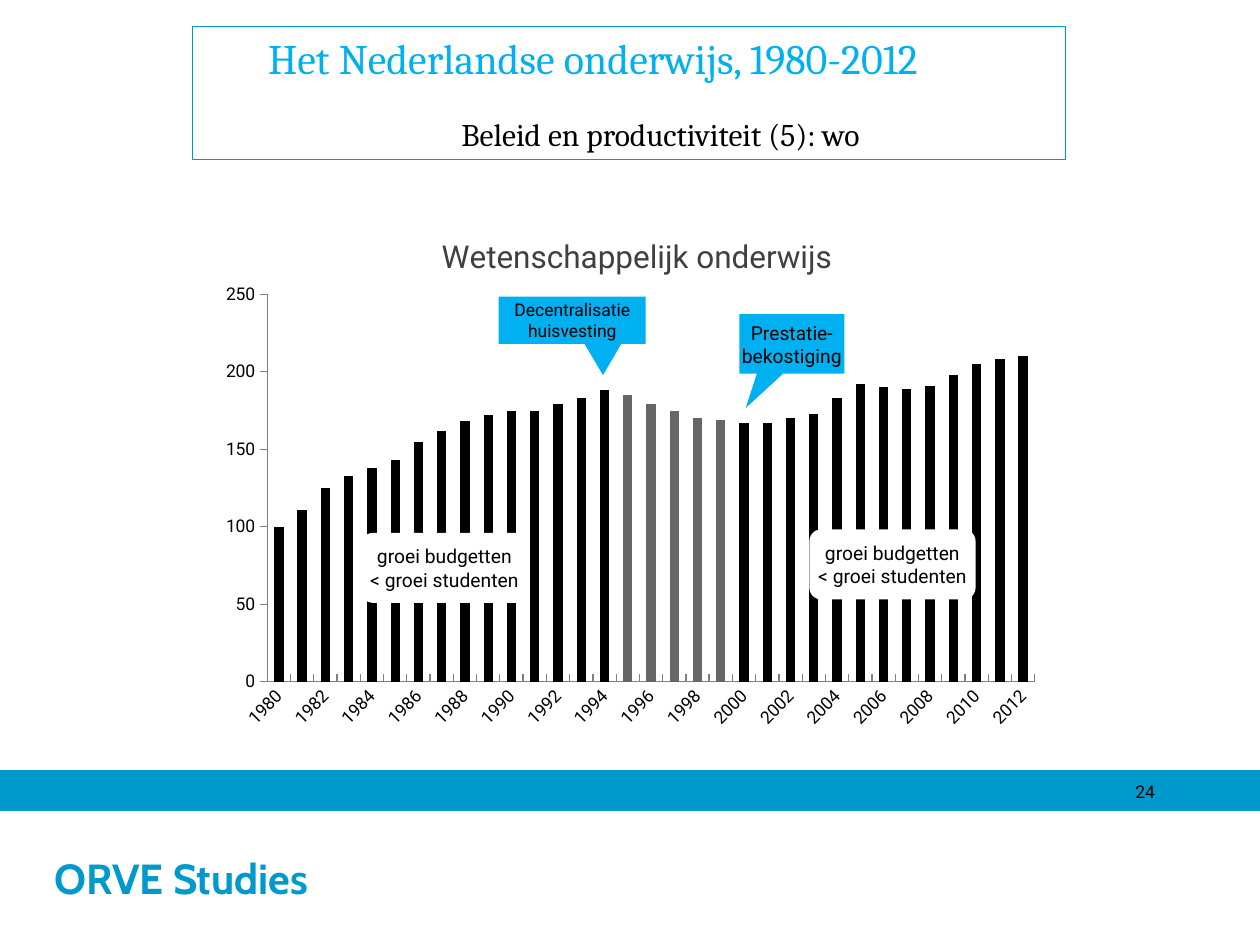
from dataclasses import dataclass

from lxml.etree import SubElement
from pptx import Presentation
from pptx.chart.data import CategoryChartData
from pptx.dml.color import RGBColor
from pptx.enum.chart import XL_CHART_TYPE, XL_TICK_MARK
from pptx.enum.shapes import MSO_SHAPE
from pptx.enum.text import MSO_ANCHOR, MSO_AUTO_SIZE, PP_ALIGN
from pptx.oxml.ns import qn
from pptx.util import Pt


@dataclass(frozen=True)
class Theme:
    """Colours, fonts and type sizes of the slide."""
    band: str = "0099CC"
    accent: str = "00B0F0"
    ink: str = "000000"
    paper: str = "FFFFFF"
    muted: str = "666666"
    axis: str = "808080"
    chart_title: str = "404040"
    heading_font: str = "Cambria"
    body_font: str = "Roboto"
    brand_font: str = "Cabin"
    heading: int = 24
    subheading: int = 18
    label: int = 11
    small: int = 10


THEME = Theme()
PRODUCTIVITY = [100, 111, 125, 133, 138, 143, 155, 162, 168, 172, 175,
                175, 179, 183, 188, 185, 179, 175, 170, 169, 167, 167,
                170, 173, 183, 192, 190, 189, 191, 198, 205, 208, 210]
FIRST_YEAR = 1980
DECLINE_YEARS = range(1995, 2000)
BUDGET_LINES = ["groei budgetten", "< groei studenten"]


def style_font(font, size, color=THEME.ink, name=THEME.body_font, bold=False):
    """Set size, colour, typeface and weight."""
    font.size = Pt(size)
    font.color.rgb = RGBColor.from_string(color)
    font.name = name
    font.bold = bold


def set_frame(frame, side=0, edge=3.6, anchor=MSO_ANCHOR.MIDDLE):
    """Set wrapping, anchor and insets of a text frame."""
    frame.word_wrap = True
    frame.auto_size = MSO_AUTO_SIZE.NONE
    frame.vertical_anchor = anchor
    frame.margin_left = frame.margin_right = Pt(side)
    frame.margin_top = frame.margin_bottom = Pt(edge)


def add_run(paragraph, text, size, **style):
    """Append one formatted run."""
    run = paragraph.add_run()
    run.text = text
    style_font(run.font, size, **style)


def add_block(slide, kind, box, fill, line=None):
    """Add a flat filled shape with an optional outline."""
    block = slide.shapes.add_shape(kind, *map(Pt, box))
    block.shadow.inherit = False
    block.fill.solid()
    block.fill.fore_color.rgb = RGBColor.from_string(fill)
    if line:
        block.line.color.rgb = RGBColor.from_string(line)
        block.line.width = Pt(0.75)
    else:
        block.line.fill.background()
    return block


def add_footer(slide):
    """Add the coloured band, the sender's name and the page number."""
    add_block(slide, MSO_SHAPE.RECTANGLE, (0, 458, 720, 22), THEME.band, THEME.band)
    sender = add_block(slide, MSO_SHAPE.RECTANGLE, (0, 463.5, 720.5, 76.5), THEME.paper)
    set_frame(sender.text_frame, side=31)
    sender_line = sender.text_frame.paragraphs[0]
    sender_line.alignment = PP_ALIGN.LEFT
    add_run(sender_line, "ORVE Studies", THEME.heading,
            color=THEME.band, name=THEME.brand_font, bold=True)
    add_block(slide, MSO_SHAPE.RECTANGLE, (0, 440.6, 720, 17.4), THEME.band, THEME.band)
    page = slide.shapes.add_textbox(Pt(510), Pt(443), Pt(150), Pt(18))
    set_frame(page.text_frame, anchor=MSO_ANCHOR.TOP)
    page_line = page.text_frame.paragraphs[0]
    page_line.alignment = PP_ALIGN.RIGHT
    add_run(page_line, "24", THEME.small)


def add_heading(slide):
    """Place the title and subtitle in the framed title placeholder."""
    heading = slide.shapes.title
    heading.left, heading.top, heading.width, heading.height = map(Pt, (110, 15, 499, 76))
    heading.line.color.rgb = RGBColor.from_string(THEME.band)
    heading.line.width = Pt(0.75)
    frame = heading.text_frame
    set_frame(frame, side=7.2)
    lines = [
        ("Het Nederlandse onderwijs, 1980-2012", THEME.heading, THEME.accent, PP_ALIGN.LEFT),
        ("Beleid en productiviteit (5): wo", THEME.subheading, THEME.ink, PP_ALIGN.CENTER),
    ]
    for index, (text, size, color, alignment) in enumerate(lines):
        paragraph = frame.add_paragraph() if index else frame.paragraphs[0]
        properties = paragraph._p.get_or_add_pPr()
        properties.set("marL", str(Pt(36)))
        properties.set("indent", "0")
        paragraph.alignment = alignment
        paragraph.space_after = Pt(18)
        add_run(paragraph, text, size, color=color, name=THEME.heading_font)


def set_layout(element, **fractions):
    """Give a chart element a manual layout in fractions of the chart."""
    layout = element.get_or_add_layout() if hasattr(element, "get_or_add_layout") else None
    if layout is None:
        layout = element.find(qn("c:layout"))
    if layout is None:
        layout = SubElement(element, qn("c:layout"))
        element.insert(0, layout)
    manual = SubElement(layout, qn("c:manualLayout"))
    if "w" in fractions:
        SubElement(manual, qn("c:layoutTarget")).set("val", "inner")
    for side in ("xMode", "yMode"):
        SubElement(manual, qn(f"c:{side}")).set("val", "edge")
    for key, value in fractions.items():
        SubElement(manual, qn(f"c:{key}")).set("val", str(value))


def style_axes(chart):
    """Format the year axis and the index axis."""
    years, index = chart.category_axis, chart.value_axis
    for axis in (years, index):
        axis.has_major_gridlines = False
        axis.minor_tick_mark = XL_TICK_MARK.NONE
        axis.format.line.color.rgb = RGBColor.from_string(THEME.axis)
        style_font(axis.tick_labels.font, THEME.small)
    years.major_tick_mark = XL_TICK_MARK.INSIDE
    years._element.find(qn("c:txPr")).find(qn("a:bodyPr")).set("rot", "-2700000")
    label_step = SubElement(years._element, qn("c:tickLblSkip"))
    label_step.set("val", "2")
    years._element.find(qn("c:noMultiLvlLbl")).addprevious(label_step)
    index.major_tick_mark = XL_TICK_MARK.OUTSIDE
    index.minimum_scale, index.maximum_scale, index.major_unit = 0, 250, 50


def add_productivity_chart(slide):
    """Add the column chart with the years of decline in grey."""
    data = CategoryChartData()
    data.categories = [str(FIRST_YEAR + i) for i in range(len(PRODUCTIVITY))]
    data.add_series("Series 1", PRODUCTIVITY)
    chart = slide.shapes.add_chart(
        XL_CHART_TYPE.COLUMN_CLUSTERED, *map(Pt, (119, 116, 482, 307.5)), data).chart
    style_font(chart.font, THEME.small)
    chart.has_legend = False
    chart.has_title = True
    add_run(chart.chart_title.text_frame.paragraphs[0], "Wetenschappelijk onderwijs",
            THEME.subheading, color=THEME.chart_title)
    chart.chart_title.include_in_layout = False
    set_layout(chart.chart_title._element, x=0.27, y=0.05)
    set_layout(chart._chartSpace.chart.plotArea, x=0.07, y=0.17, w=0.91, h=0.72)
    style_axes(chart)
    plot = chart.plots[0]
    plot.gap_width = 150
    plot.vary_by_categories = False
    columns = plot.series[0]
    columns.format.fill.solid()
    columns.format.fill.fore_color.rgb = RGBColor.from_string(THEME.ink)
    for year in DECLINE_YEARS:
        fill = columns.points[year - FIRST_YEAR].format.fill
        fill.solid()
        fill.fore_color.rgb = RGBColor.from_string(THEME.muted)


def add_label(slide, kind, box, fill, paragraphs, size=THEME.label, edge=3.6, pointer=()):
    """Add a centred label; each paragraph is a list of lines."""
    label = add_block(slide, kind, box, fill)
    for index, offset in enumerate(pointer):
        label.adjustments[index] = offset
    frame = label.text_frame
    set_frame(frame, edge=edge)
    for index, lines in enumerate(paragraphs):
        paragraph = frame.add_paragraph() if index else frame.paragraphs[0]
        paragraph.alignment = PP_ALIGN.CENTER
        for number, line in enumerate(lines):
            if number:
                paragraph.add_line_break()
            add_run(paragraph, line, size)


def main():
    """Build the slide and save it."""
    deck = Presentation()
    deck.slide_width, deck.slide_height = Pt(720), Pt(540)
    slide = deck.slides.add_slide(deck.slide_layouts[5])
    add_footer(slide)
    add_productivity_chart(slide)
    add_heading(slide)
    for left, top in ((206.5, 304.5), (462.5, 302.5)):
        add_label(slide, MSO_SHAPE.ROUNDED_RECTANGLE, (left, top, 95, 40),
                  THEME.paper, [BUDGET_LINES])
    add_label(slide, MSO_SHAPE.RECTANGULAR_CALLOUT, (422.5, 179.5, 60, 34), THEME.accent,
              [["Prestatie-"], ["bekostiging"]], pointer=(-0.44, 1.08))
    add_label(slide, MSO_SHAPE.RECTANGULAR_CALLOUT, (285, 169.5, 84, 27), THEME.accent,
              [["Decentralisatie huisvesting"]], THEME.small, edge=0, pointer=(0.21, 1.16))
    deck.save("out.pptx")


if __name__ == "__main__":
    main()
